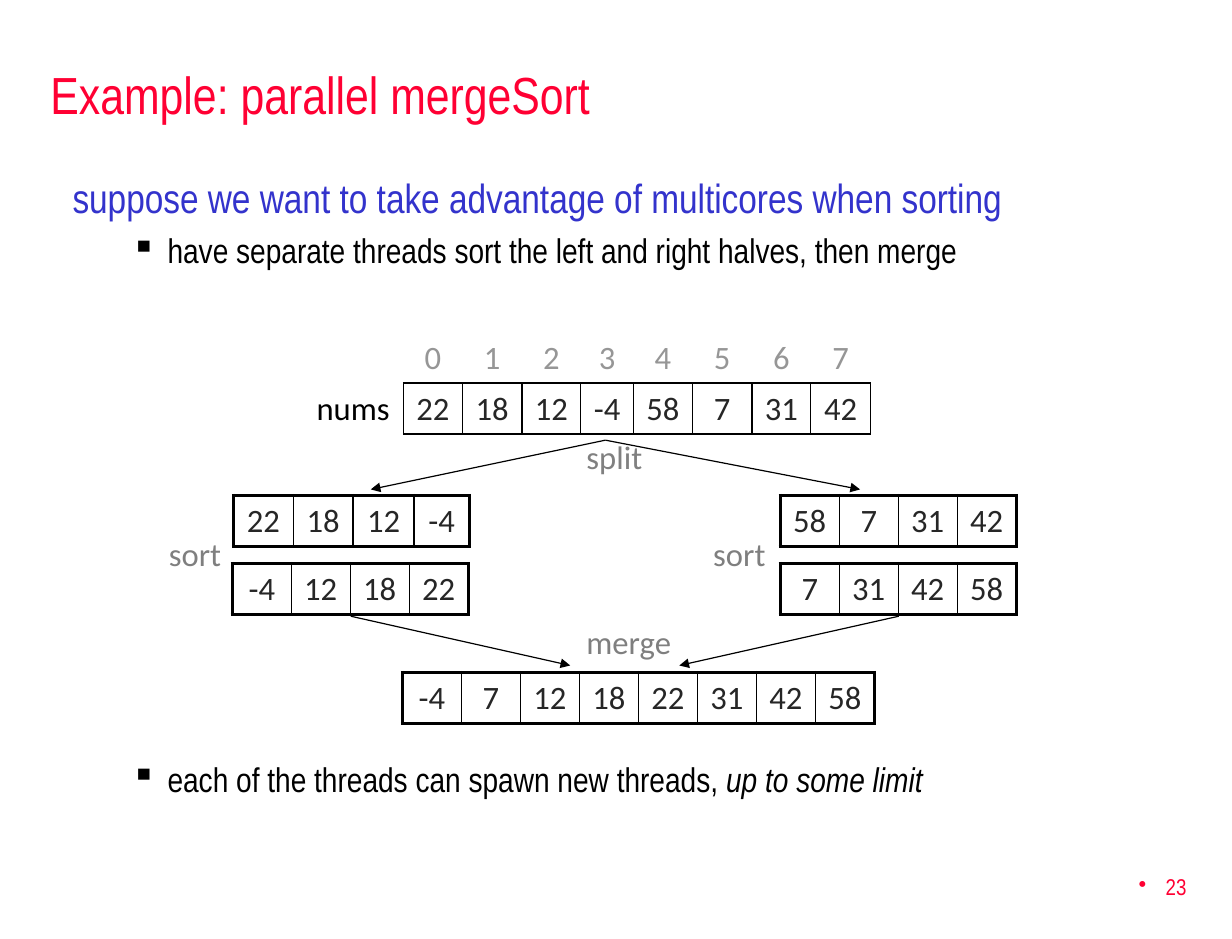
from dataclasses import dataclass

from lxml import etree
from pptx import Presentation
from pptx import util as u
from pptx.dml.color import RGBColor
from pptx.enum import shapes, text
from pptx.oxml import ns

RED = RGBColor(0xFF, 0x00, 0x33)
BLUE = RGBColor(0x33, 0x33, 0xCC)
BLACK = RGBColor(0x00, 0x00, 0x00)
DARK = RGBColor(0x26, 0x26, 0x26)
INDEX_GRAY = RGBColor(0x96, 0x96, 0x96)
LABEL_GRAY = RGBColor(0x80, 0x80, 0x80)
STEP_GRAY = RGBColor(0x7F, 0x7F, 0x7F)

NARROW = "Arial Narrow"
CALIBRI = "Calibri"
ROW_HEIGHT = 0.43
CELL_WIDTH = 0.503
THIN = 1
THICK = 2.25


@dataclass(frozen=True)
class Sequence:
    left: float
    top: float
    values: tuple[str, ...]
    widths: tuple[float, ...] = ()


@dataclass(frozen=True)
class Label:
    words: str
    left: float
    top: float
    width: float
    color: RGBColor = STEP_GRAY


@dataclass(frozen=True)
class Arrow:
    start: tuple[float, float]
    end: tuple[float, float]


NUMS_WIDTHS = (0.86, 0.5, 0.51, 0.5, 0.45, 0.5, 0.51, 0.5, 0.51)
NUMS_ROWS = (
    ("", "0", "1", "2", "3", "4", "5", "6", "7"),
    ("nums", "22", "18", "12", "-4", "58", "7", "31", "42"),
)
SEQUENCES = (
    Sequence(1.99, 4.22, ("22", "18", "12", "-4"), (0.51, 0.51, 0.52, 0.47)),
    Sequence(6.65, 4.22, ("58", "7", "31", "42")),
    Sequence(1.98, 4.8, ("-4", "12", "18", "22")),
    Sequence(6.65, 4.8, ("7", "31", "42", "58")),
    Sequence(3.43, 5.73, ("-4", "7", "12", "18", "22", "31", "42", "58")),
)
SORT_LABELS = (Label("sort", 1.34, 4.5, 0.65), Label("sort", 5.98, 4.5, 0.65))
STAGES = (
    (
        Label("split", 4.9, 3.67, 0.68, LABEL_GRAY),
        (Arrow((5.16, 3.75), (3.16, 4.17)), Arrow((5.16, 3.75), (7.33, 4.17))),
    ),
    (
        Label("merge", 4.9, 5.25, 0.94),
        (Arrow((2.99, 5.25), (4.86, 5.67)), Arrow((7.66, 5.25), (5.79, 5.67))),
    ),
)


def add_run(paragraph, words: str, size: float, font: str, color: RGBColor, italic: bool = False) -> None:
    run = paragraph.add_run()
    run.text = words
    run.font.size = u.Pt(size)
    run.font.name = font
    run.font.color.rgb = color
    run.font.italic = italic


def set_indent(paragraph, margin: float, hanging: float, bullet: str = "") -> None:
    properties = paragraph._p.get_or_add_pPr()
    properties.set("marL", str(u.Inches(margin)))
    properties.set("indent", str(-u.Inches(hanging)))
    if bullet:
        etree.SubElement(properties, ns.qn("a:buChar")).set("char", bullet)


def set_borders(cell, **widths: float) -> None:
    properties = cell._tc.get_or_add_tcPr()
    for side in "LRTB":
        width = widths.get(side, 0)
        line = etree.SubElement(properties, ns.qn(f"a:ln{side}"))
        if width:
            line.set("w", str(u.Pt(width)))
            fill = etree.SubElement(line, ns.qn("a:solidFill"))
            etree.SubElement(fill, ns.qn("a:srgbClr")).set("val", str(BLACK))
        else:
            etree.SubElement(line, ns.qn("a:noFill"))


def add_grid(slide, left: float, top: float, widths: tuple[float, ...], row_count: int):
    frame = slide.shapes.add_table(
        row_count, len(widths), u.Inches(left), u.Inches(top),
        u.Inches(sum(widths)), u.Inches(ROW_HEIGHT * row_count),
    )
    table = frame.table
    table.first_row = False
    table.horz_banding = False
    for column, width in zip(table.columns, widths):
        column.width = u.Inches(width)
    for row in table.rows:
        row.height = u.Inches(ROW_HEIGHT)
    return table


def fill_cell(cell, words: str, color: RGBColor, **borders: float) -> None:
    set_borders(cell, **borders)
    cell.fill.background()
    paragraph = cell.text_frame.paragraphs[0]
    paragraph.alignment = text.PP_ALIGN.CENTER
    if words:
        add_run(paragraph, words, 20, CALIBRI, color)


def add_nums_table(slide) -> None:
    table = add_grid(slide, 2.58, 2.83, NUMS_WIDTHS, len(NUMS_ROWS))
    indices, numbers = NUMS_ROWS
    for column, (index, number) in enumerate(zip(indices, numbers)):
        if column == 0:
            fill_cell(table.cell(0, column), index, INDEX_GRAY)
            fill_cell(table.cell(1, column), number, BLACK, R=THIN)
        else:
            fill_cell(table.cell(0, column), index, INDEX_GRAY, B=THIN)
            fill_cell(table.cell(1, column), number, DARK, L=THIN, R=THIN, T=THIN, B=THIN)


def add_sequence(slide, sequence: Sequence) -> None:
    widths = sequence.widths or (CELL_WIDTH,) * len(sequence.values)
    table = add_grid(slide, sequence.left, sequence.top, widths, 1)
    last = len(widths) - 1
    for column, value in enumerate(sequence.values):
        fill_cell(
            table.cell(0, column), value, DARK,
            L=THICK if column == 0 else THIN,
            R=THICK if column == last else THIN,
            T=THICK, B=THICK,
        )


def add_label(container, label: Label) -> None:
    box = container.add_textbox(
        u.Inches(label.left), u.Inches(label.top), u.Inches(label.width), u.Inches(0.44)
    )
    box.text_frame.word_wrap = False
    box.text_frame.auto_size = text.MSO_AUTO_SIZE.SHAPE_TO_FIT_TEXT
    add_run(box.text_frame.paragraphs[0], label.words, 20, CALIBRI, label.color)


def add_arrow(container, arrow: Arrow) -> None:
    points = [u.Inches(value) for value in arrow.start + arrow.end]
    connector = container.add_connector(shapes.MSO_CONNECTOR.STRAIGHT, *points)
    connector.line.color.rgb = BLACK
    connector.line.width = u.Pt(0.75)
    etree.SubElement(connector.line._get_or_add_ln(), ns.qn("a:tailEnd")).set("type", "triangle")
    etree.SubElement(connector._element.spPr, ns.qn("a:effectLst"))


def add_title(slide) -> None:
    title = slide.shapes.title
    title.left, title.top = u.Inches(0.33), u.Inches(0.42)
    title.width, title.height = u.Inches(9.92), u.Inches(0.75)
    title.text_frame.vertical_anchor = text.MSO_ANCHOR.MIDDLE
    paragraph = title.text_frame.paragraphs[0]
    paragraph.alignment = text.PP_ALIGN.LEFT
    add_run(paragraph, "Example: parallel mergeSort", 32, NARROW, RED)


def add_body(slide) -> None:
    box = slide.shapes.add_textbox(u.Inches(0.52), u.Inches(1.42), u.Inches(9.56), u.Inches(5.92))
    frame = box.text_frame
    frame.word_wrap = True
    heading = frame.paragraphs[0]
    set_indent(heading, 0.38, 0.38)
    add_run(heading, "suppose we want to take advantage of multicores when sorting", 25, NARROW, BLUE)
    bullets = (
        (5, "have separate threads sort the left and right halves, then merge", ""),
        (299, "each of the threads can spawn new threads, ", "up to some limit"),
    )
    for space, plain, emphasis in bullets:
        paragraph = frame.add_paragraph()
        paragraph.level = 1
        paragraph.space_before = u.Pt(space)
        set_indent(paragraph, 0.81, 0.31, "▪")
        add_run(paragraph, plain, 21, NARROW, BLACK)
        if emphasis:
            add_run(paragraph, emphasis, 21, NARROW, BLACK, italic=True)


def add_page_number(slide) -> None:
    box = slide.shapes.add_textbox(u.Inches(8.02), u.Inches(7.29), u.Inches(2.19), u.Inches(0.53))
    box.text_frame.word_wrap = True
    box.text_frame.vertical_anchor = text.MSO_ANCHOR.MIDDLE
    paragraph = box.text_frame.paragraphs[0]
    paragraph.alignment = text.PP_ALIGN.RIGHT
    set_indent(paragraph, 0.23, 0.23, "•")
    add_run(paragraph, "23", 14, NARROW, RED)


def main() -> None:
    presentation = Presentation()
    presentation.slide_width, presentation.slide_height = u.Inches(10.5), u.Inches(8)
    slide = presentation.slides.add_slide(presentation.slide_layouts[5])
    add_title(slide)
    add_body(slide)
    add_page_number(slide)
    add_nums_table(slide)
    for sequence in SEQUENCES:
        add_sequence(slide, sequence)
    for label, arrows in STAGES:
        group = slide.shapes.add_group_shape()
        add_label(group.shapes, label)
        for arrow in arrows:
            add_arrow(group.shapes, arrow)
    for label in SORT_LABELS:
        add_label(slide.shapes, label)
    presentation.save("out.pptx")


if __name__ == "__main__":
    main()
